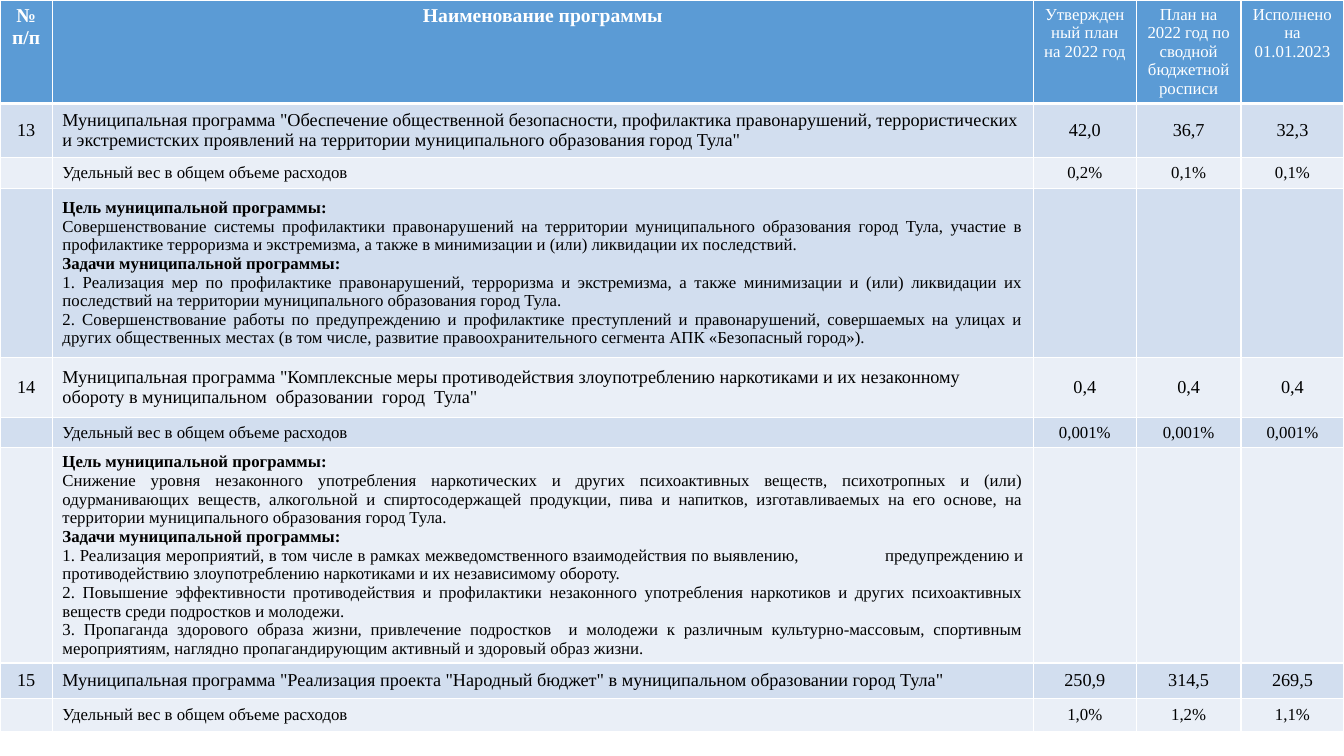
import pptx
import pptx.dml.color
import pptx.enum.text
import pptx.oxml.ns
import pptx.util
from lxml import etree

ALIGN = pptx.enum.text.PP_ALIGN
ANCHOR = pptx.enum.text.MSO_ANCHOR
SLIDE_WIDTH, SLIDE_HEIGHT = 13.33, 7.5
FONT = "Times New Roman"
WHITE, BLACK, HEADER_BLUE = "FFFFFF", "000000", "5B9BD5"
BANDS = ("D2DEEF", "EAEFF7")
COLUMN_WIDTHS = (0.52, 9.73, 1.02, 1.04, 1.02)
HEADER_HEIGHT = 1.02
SMALL, NORMAL, LARGE = 12, 13, 14
GAP_TAB = 8.1  # inches from the text's left edge

HEADERS = (
    "№ п/п",
    "Наименование программы",
    "Утвержденный план на 2022 год",
    "План на 2022 год по сводной бюджетной росписи",
    "Исполнено на 01.01.2023",
)
SHARE = "Удельный вес в общем объеме расходов"
GOAL = "Цель муниципальной программы:"
TASKS = "Задачи муниципальной программы:"

# Each row: height, kind, number, paragraphs, three values
ROWS = (
    (0.54, "program", "13", [
        'Муниципальная программа "Обеспечение общественной безопасности, профилактика правонарушений, '
        'террористических и экстремистских проявлений на территории муниципального образования город Тула"',
    ], ("42,0", "36,7", "32,3")),
    (0.3, "share", "", [SHARE], ("0,2%", "0,1%", "0,1%")),
    (1.68, "details", "", [
        GOAL,
        "Совершенствование системы профилактики правонарушений на территории муниципального образования "
        "город Тула, участие в профилактике терроризма и экстремизма, а также в минимизации и (или) "
        "ликвидации их последствий.",
        TASKS,
        "1. Реализация мер по профилактике правонарушений, терроризма и экстремизма, а также минимизации "
        "и (или) ликвидации их последствий на территории муниципального образования город Тула.",
        "2. Совершенствование работы по предупреждению и профилактике преступлений и правонарушений, "
        "совершаемых на улицах и других общественных местах (в том числе, развитие правоохранительного "
        "сегмента АПК «Безопасный город»).",
    ], ("", "", "")),
    (0.59, "program", "14", [
        'Муниципальная программа "Комплексные меры противодействия злоупотреблению наркотиками и их '
        'незаконному обороту в муниципальном  образовании  город  Тула"',
    ], ("0,4", "0,4", "0,4")),
    (0.29, "share", "", [SHARE], ("0,001%", "0,001%", "0,001%")),
    (2.13, "details", "", [
        GOAL,
        "Снижение уровня незаконного употребления наркотических и других психоактивных веществ, "
        "психотропных и (или) одурманивающих веществ, алкогольной и спиртосодержащей продукции, пива и "
        "напитков, изготавливаемых на его основе, на территории муниципального образования город Тула.",
        TASKS,
        "1. Реализация мероприятий, в том числе в рамках межведомственного взаимодействия по выявлению,"
        "\tпредупреждению и противодействию злоупотреблению наркотиками и их независимому обороту.",
        "2. Повышение эффективности противодействия и профилактики незаконного употребления наркотиков "
        "и других психоактивных веществ среди подростков и молодежи.",
        "3. Пропаганда здорового образа жизни, привлечение подростков  и молодежи к различным "
        "культурно-массовым, спортивным мероприятиям, наглядно пропагандирующим активный и здоровый "
        "образ жизни.",
    ], ("", "", "")),
    (0.35, "program", "15", [
        'Муниципальная программа "Реализация проекта "Народный бюджет" в муниципальном образовании город Тула"',
    ], ("250,9", "314,5", "269,5")),
    (0.33, "share", "", [SHARE], ("1,0%", "1,2%", "1,1%")),
)


def color(hex_string):
    return pptx.dml.color.RGBColor.from_string(hex_string)


def add_element(parent, tag, **attributes):
    return etree.SubElement(parent, pptx.oxml.ns.qn(tag), **attributes)


def style_cell(cell, fill, bottom_width=1):
    """Give the cell white borders and a solid fill."""
    properties = cell._tc.get_or_add_tcPr()
    for side in "LRTB":
        points = bottom_width if side == "B" else 1
        line = add_element(properties, f"a:ln{side}", w=str(pptx.util.Pt(points)))
        add_element(add_element(line, "a:solidFill"), "a:srgbClr", val=WHITE)
    cell.fill.solid()
    cell.fill.fore_color.rgb = color(fill)


def write_cell(cell, texts, size, alignment, text_color=BLACK, bold_texts=()):
    frame = cell.text_frame
    for index, text in enumerate(texts):
        paragraph = frame.add_paragraph() if index else frame.paragraphs[0]
        paragraph.alignment = alignment
        if not text:
            add_element(paragraph._p, "a:endParaRPr", sz=str(size * 100))
            continue
        if "\t" in text:
            tabs = add_element(paragraph._p.get_or_add_pPr(), "a:tabLst")
            add_element(tabs, "a:tab", pos=str(pptx.util.Inches(GAP_TAB)), algn="l")
        run = paragraph.add_run()
        run.text = text
        run.font.name = FONT
        run.font.size = pptx.util.Pt(size)
        run.font.bold = text in bold_texts
        run.font.color.rgb = color(text_color)


def fill_header(table):
    for column, text in enumerate(HEADERS):
        cell = table.cell(0, column)
        style_cell(cell, HEADER_BLUE, bottom_width=3)
        cell.vertical_anchor = ANCHOR.TOP
        size = LARGE if column < 2 else SMALL
        write_cell(cell, [text], size, ALIGN.CENTER, WHITE, HEADERS[:2])


def fill_row(table, row, kind, number, paragraphs, values):
    size = NORMAL if kind == "program" else SMALL
    name_alignment = ALIGN.LEFT if kind == "program" else ALIGN.JUSTIFY
    contents = ([number], paragraphs, *([value] for value in values))
    for column, texts in enumerate(contents):
        cell = table.cell(row, column)
        style_cell(cell, BANDS[(row - 1) % 2])
        cell.vertical_anchor = ANCHOR.MIDDLE
        alignment = name_alignment if column == 1 else ALIGN.CENTER
        write_cell(cell, texts, size, alignment, bold_texts=(GOAL, TASKS))


def add_program_table(slide, left, top, width):
    heights = [HEADER_HEIGHT] + [row[0] for row in ROWS]
    box = [pptx.util.Inches(length) for length in (left, top, width, sum(heights))]
    table = slide.shapes.add_table(len(heights), len(COLUMN_WIDTHS), *box).table
    for column, share in zip(table.columns, COLUMN_WIDTHS):
        column.width = pptx.util.Inches(width * share / sum(COLUMN_WIDTHS))
    for row, height in zip(table.rows, heights):
        row.height = pptx.util.Inches(height)
    fill_header(table)
    for index, (_, *content) in enumerate(ROWS, start=1):
        fill_row(table, index, *content)


def main():
    presentation = pptx.Presentation()
    presentation.slide_width = pptx.util.Inches(SLIDE_WIDTH)
    presentation.slide_height = pptx.util.Inches(SLIDE_HEIGHT)
    slide = presentation.slides.add_slide(presentation.slide_layouts[6])
    add_program_table(slide, 0, 0, SLIDE_WIDTH)
    presentation.save("out.pptx")


if __name__ == "__main__":
    main()
